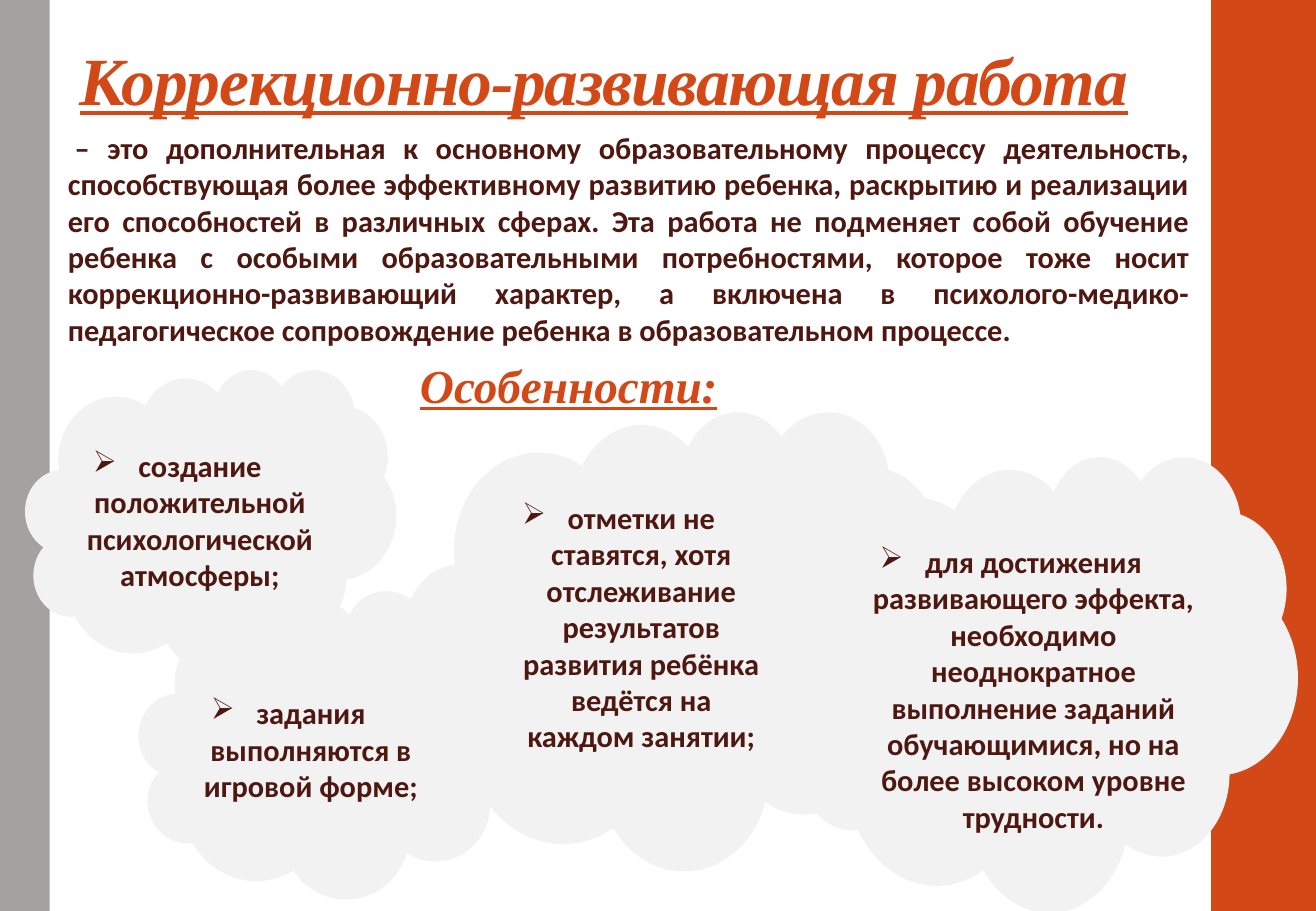
from lxml import etree
from pptx import Presentation
from pptx.dml.color import RGBColor
from pptx.enum.shapes import MSO_SHAPE
from pptx.enum.text import MSO_ANCHOR, PP_ALIGN
from pptx.oxml.ns import qn
from pptx.util import Cm, Pt

RECT, CLOUD = MSO_SHAPE.RECTANGLE, MSO_SHAPE.CLOUD
LEFT, CENTER, JUST = PP_ALIGN.LEFT, PP_ALIGN.CENTER, PP_ALIGN.JUSTIFY
TOP, BOTTOM = MSO_ANCHOR.TOP, MSO_ANCHOR.BOTTOM

# Content: boxes are left, top, width, height in cm
WIDE, HIGH = 27.51, 19.05
COLORS = {"accent": "D34817", "side": "A6A1A1", "cloud": "F2F2F2", "text": "4E1710"}

TITLE = ("Коррекционно-развивающая работа", (1.42, 0.53, 24.26, 2.11))
INTRO = (
    "\u00a0– это дополнительная к основному образовательному процессу деятельность, "
    "способствующая более эффективному развитию ребенка, раскрытию и реализации его "
    "способностей в различных сферах. Эта работа не подменяет собой обучение ребенка "
    "с особыми образовательными потребностями, которое тоже носит "
    "коррекционно-развивающий характер, а включена в "
    "психолого-медико-педагогическое сопровождение ребенка в образовательном процессе.",
    (1.17, 2.57, 23.95, 4.88),
)
HEAD = ("Особенности:", (8.53, 7.32, 13.77, 1.45))

# Each feature: text, cloud box, text box
FEATURES = [
    ("создание положительной психологической атмосферы;",
     (0.53, 7.72, 7.75, 6.3), (0.25, 9.22, 6.91, 3.33)),
    ("задания выполняются в игровой форме;",
     (2.9, 12.34, 8.48, 6.45), (2.57, 14.4, 6.91, 2.57)),
    ("отметки не ставятся, хотя отслеживание результатов развития ребёнка "
     "ведётся на каждом занятии;",
     (8.48, 8.59, 11.38, 9.6), (9.63, 10.31, 6.6, 5.64)),
    ("для достижения развивающего эффекта, необходимо неоднократное выполнение "
     "заданий обучающимися, но на более высоком уровне трудности.",
     (16.51, 9.53, 10.62, 9.53), (16.66, 11.23, 8.94, 6.4)),
]

# Formats
PLAIN = {"name": "Calibri", "size": Pt(18), "bold": True}
FANCY = {"name": "Times New Roman", "bold": True, "italic": True, "underline": True}
INDENT = Cm(0.95)


def paint(name):
    return RGBColor.from_string(COLORS[name])


def add_form(slide, kind, box, color):
    form = slide.shapes.add_shape(kind, *map(Cm, box))
    form.shadow.inherit = False
    form.fill.solid()
    form.fill.fore_color.rgb = paint(color)
    form.line.fill.background()


def add_text(slide, item, style, color, align=LEFT, anchor=TOP):
    text, box = item
    frame = slide.shapes.add_textbox(*map(Cm, box)).text_frame
    frame.word_wrap = True
    frame.vertical_anchor = anchor
    par = frame.paragraphs[0]
    par.alignment = align
    run = par.add_run()
    run.text = text
    for key, value in style.items():
        setattr(run.font, key, value)
    run.font.color.rgb = paint(color)
    return par


def add_bullet(par):
    props = par._p.get_or_add_pPr()
    props.set("marL", str(INDENT))
    props.set("indent", str(-INDENT))
    etree.SubElement(props, qn("a:buChar")).set("char", "➢")


deck = Presentation()
deck.slide_width, deck.slide_height = Cm(WIDE), Cm(HIGH)
slide = deck.slides.add_slide(deck.slide_layouts[6])

# Side bars
add_form(slide, RECT, (25.32, 0, WIDE - 25.32, HIGH), "accent")
add_form(slide, RECT, (0, 0, 1.04, HIGH), "side")

# Clouds
for _, cloud, _ in FEATURES:
    add_form(slide, CLOUD, cloud, "cloud")

# Title, with tight letters
title = add_text(slide, TITLE, {**FANCY, "size": Pt(40)}, "accent", anchor=BOTTOM)
title.line_spacing = 0.9
title.runs[0]._r.get_or_add_rPr().set("spc", "-70")

# Introduction and heading
add_text(slide, INTRO, PLAIN, "text", JUST)
add_text(slide, HEAD, {**FANCY, "size": Pt(28)}, "accent")

# Features
for text, _, box in FEATURES:
    add_bullet(add_text(slide, (text, box), PLAIN, "text", CENTER))

deck.save("out.pptx")
